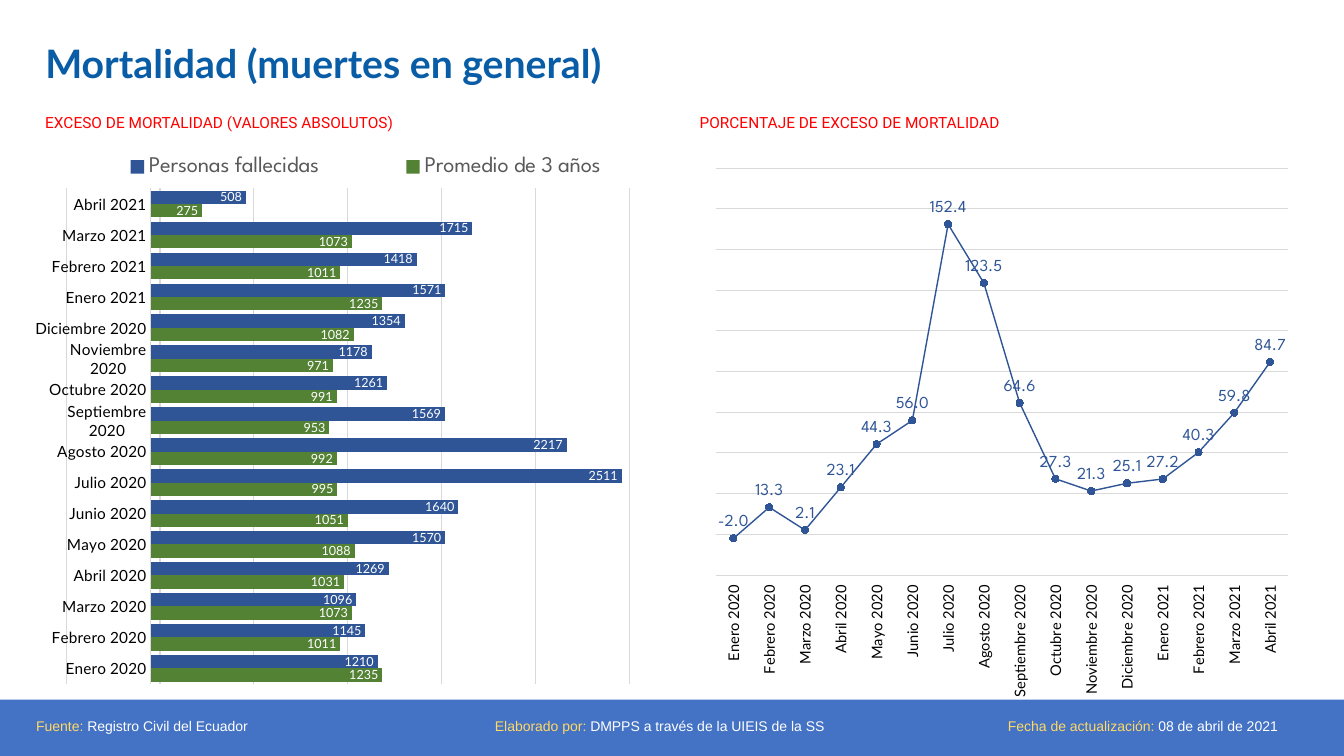
import pptx
import pptx.chart.data
import pptx.dml.color
import pptx.enum.chart
import pptx.enum.shapes
import pptx.enum.text
import pptx.oxml
import pptx.oxml.ns
import pptx.util

Inches = pptx.util.Inches
Pt = pptx.util.Pt
XL = pptx.enum.chart
ALIGN = pptx.enum.text.PP_ALIGN
ANCHOR = pptx.enum.text.MSO_ANCHOR

COLORS = {
    "title": "095DA6", "heading": "FF0000", "bar": "4472C4", "label": "FFD966",
    "white": "FFFFFF", "black": "000000", "grid": "D9D9D9", "legend": "595959",
    "deaths": "2F5597", "average": "548235",
}

MONTHS = ["Enero", "Febrero", "Marzo", "Abril", "Mayo", "Junio", "Julio", "Agosto",
          "Septiembre", "Octubre", "Noviembre", "Diciembre"]
PERIODS = [f"{m} 2020" for m in MONTHS] + [f"{m} 2021" for m in MONTHS[:4]]
AVERAGE = [1235, 1011, 1073, 1031, 1088, 1051, 995, 992,
           953, 991, 971, 1082, 1235, 1011, 1073, 275]
DEATHS = [1210, 1145, 1096, 1269, 1570, 1640, 2511, 2217,
          1569, 1261, 1178, 1354, 1571, 1418, 1715, 508]
EXCESS = [-2, 13.3, 2.1, 23.1, 44.3, 56, 152.4, 123.5,
          64.6, 27.3, 21.3, 25.1, 27.2, 40.3, 59.8, 84.7]


def rgb(name):
    return pptx.dml.color.RGBColor.from_string(COLORS[name])


def style_font(font, face, size, color, bold=False):
    font.name = face
    font.size = Pt(size)
    font.bold = bold
    font.color.rgb = rgb(color)


def set_layout(element, x, y, w, h, inner=False):
    """Fix the place of a plot area or legend, in fractions of the chart."""
    for old in element.findall(pptx.oxml.ns.qn("c:layout")):
        element.remove(old)
    target = '<c:layoutTarget val="inner"/>' if inner else ""
    values = "".join(f'<c:{tag} val="{v}"/>' for tag, v in zip("xywh", (x, y, w, h)))
    layout = pptx.oxml.parse_xml(
        f'<c:layout {pptx.oxml.ns.nsdecls("c")}><c:manualLayout>{target}'
        f'<c:xMode val="edge"/><c:yMode val="edge"/>{values}'
        "</c:manualLayout></c:layout>")
    position = element.find(pptx.oxml.ns.qn("c:legendPos"))
    element.insert(0 if position is None else 1, layout)


class Deck:
    def __init__(self):
        self.prs = pptx.Presentation()
        self.prs.slide_width = Inches(13.33)
        self.prs.slide_height = Inches(7.5)
        self.slide = self.prs.slides.add_slide(self.prs.slide_layouts[5])

    def fill_text(self, sp, runs, face, size, align, anchor, bold=False):
        tf = sp.text_frame
        tf.word_wrap = True
        tf.auto_size = pptx.enum.text.MSO_AUTO_SIZE.NONE
        tf.vertical_anchor = anchor
        p = tf.paragraphs[0]
        p.alignment = align
        p.line_spacing = 0.9
        for text, color in runs:
            r = p.add_run()
            r.text = text
            style_font(r.font, face, size, color, bold)

    def title(self, text, x, y, w, h):
        sp = self.slide.shapes.title
        sp.left, sp.top, sp.width, sp.height = map(Inches, (x, y, w, h))
        self.fill_text(sp, [(text, "title")], "Lato", 28, ALIGN.LEFT, ANCHOR.MIDDLE, True)

    def text(self, runs, x, y, w, h, face, size, align=ALIGN.LEFT):
        sp = self.slide.shapes.add_textbox(*map(Inches, (x, y, w, h)))
        self.fill_text(sp, runs, face, size, align, ANCHOR.MIDDLE)

    def band(self, x, y, w, h, color):
        sp = self.slide.shapes.add_shape(
            pptx.enum.shapes.MSO_SHAPE.RECTANGLE, *map(Inches, (x, y, w, h)))
        sp.shadow.inherit = False
        sp.fill.solid()
        sp.fill.fore_color.rgb = rgb(color)
        sp.line.fill.background()

    def chart(self, kind, series, number_format, x, y, w, h, plot, axis_size):
        data = pptx.chart.data.CategoryChartData(number_format=number_format)
        data.categories = PERIODS
        for name, values in series:
            data.add_series(name, values)
        chart = self.slide.shapes.add_chart(
            kind, *map(Inches, (x, y, w, h)), data).chart
        chart.has_title = False
        chart.has_legend = False
        style_font(chart.font, "League Spartan", 10, "black")
        chart.plots[0].vary_by_categories = False
        set_layout(chart._chartSpace.chart.plotArea, *plot, inner=True)

        months = chart.category_axis
        months.major_tick_mark = months.minor_tick_mark = XL.XL_TICK_MARK.NONE
        style_font(months.tick_labels.font, "Lato", axis_size, "black")
        values = chart.value_axis
        values.visible = False
        values.has_major_gridlines = True
        for line in (months.format.line, values.major_gridlines.format.line):
            line.color.rgb = rgb("grid")
            line.width = Pt(0.75)
        return chart

    def data_labels(self, series, number_format, position, face, size, color):
        labels = series.data_labels
        labels.show_value = True
        labels.number_format = number_format
        labels.number_format_is_linked = False
        labels.position = position
        style_font(labels.font, face, size, color)

    def bar_chart(self, x, y, w, h):
        series = [("Promedio de 3 años", AVERAGE), ("Personas fallecidas", DEATHS)]
        chart = self.chart(XL.XL_CHART_TYPE.BAR_CLUSTERED, series, "0",
                           x, y, w, h, (0.044, 0.098, 0.876, 0.878), 11)
        plot = chart.plots[0]
        plot.gap_width = 34
        plot.overlap = 0
        for s, color in zip(plot.series, ("average", "deaths")):
            s.format.fill.solid()
            s.format.fill.fore_color.rgb = rgb(color)
            self.data_labels(s, "0", XL.XL_LABEL_POSITION.INSIDE_END, "Lato", 9, "white")
        axis = chart.value_axis
        axis.minimum_scale, axis.maximum_scale, axis.major_unit = -450, 2550, 500
        chart.has_legend = True
        chart.legend.position = XL.XL_LEGEND_POSITION.RIGHT
        chart.legend.include_in_layout = False
        style_font(chart.legend.font, "League Spartan", 16, "legend")
        set_layout(chart.legend._element, 0.02, 0.03, 0.98, 0.06)

    def line_chart(self, x, y, w, h):
        chart = self.chart(XL.XL_CHART_TYPE.LINE_MARKERS_STACKED, [("Series 1", EXCESS)],
                           "0.0", x, y, w, h, (0.021, 0.031, 0.937, 0.745), 10.5)
        s = chart.plots[0].series[0]
        s.smooth = False
        s.format.line.color.rgb = rgb("deaths")
        s.format.line.width = Pt(1)
        s.marker.style = XL.XL_MARKER_STYLE.CIRCLE
        s.marker.size = 5
        s.marker.format.fill.solid()
        s.marker.format.fill.fore_color.rgb = rgb("deaths")
        s.marker.format.line.color.rgb = rgb("deaths")
        self.data_labels(s, "0.0", XL.XL_LABEL_POSITION.ABOVE,
                         "League Spartan", 12, "deaths")
        axis = chart.value_axis
        axis.minimum_scale, axis.maximum_scale, axis.major_unit = -20, 180, 20
        axis.crosses = XL.XL_AXIS_CROSSES.MINIMUM
        months = chart.category_axis
        months.tick_label_position = XL.XL_TICK_LABEL_POSITION.LOW
        body = months._element.find(".//" + pptx.oxml.ns.qn("a:bodyPr"))
        body.set("rot", "-5400000")
        body.set("vert", "horz")


def main():
    deck = Deck()
    deck.band(0, 6.94, 13.33, 0.56, "bar")
    deck.title("Mortalidad (muertes en general)", 0.35, 0.41, 8.46, 0.49)
    for text, x in (("EXCESO DE MORTALIDAD (VALORES ABSOLUTOS)", 0.35),
                    ("PORCENTAJE DE EXCESO DE MORTALIDAD", 6.84)):
        deck.text([(text, "heading")], x, 1.08, 5.91, 0.29, "Roboto", 11)
    deck.bar_chart(0.35, 1.32, 6.4, 5.6)
    deck.line_chart(6.97, 1.5, 6.06, 5.42)
    for label, value, x, w, align in (
            ("Fuente: ", "Registro Civil del Ecuador", 0.26, 2.95, ALIGN.LEFT),
            ("Elaborado por: ", "DMPPS a través de la UIEIS de la SS", 4.81, 4.32, ALIGN.LEFT),
            ("Fecha de actualización: ", "08 de abril de 2021", 9.65, 3.37, ALIGN.CENTER)):
        deck.text([(label, "label"), (value, "white")], x, 6.93, w, 0.57, "Arial", 10, align)
    deck.prs.save("out.pptx")


if __name__ == "__main__":
    main()
